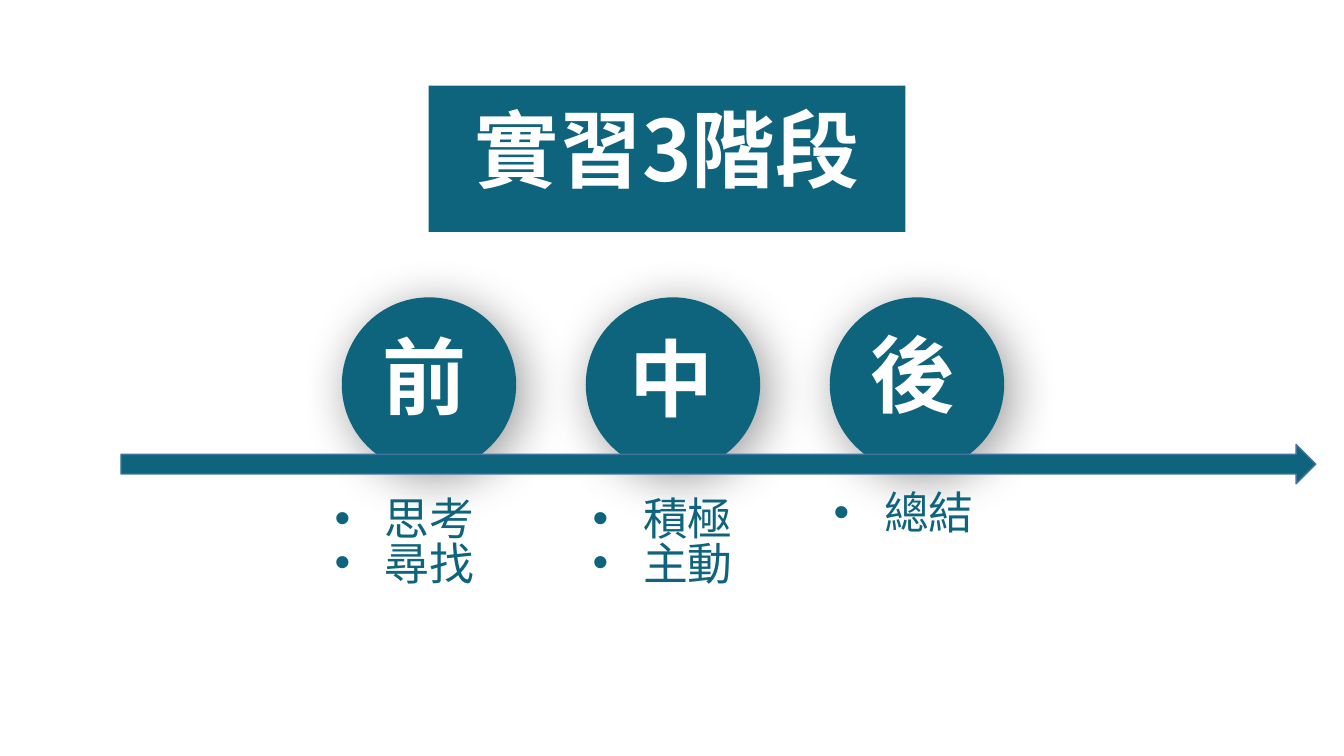
from lxml import etree
from pptx import Presentation
from pptx import util as u
from pptx.dml.color import RGBColor
from pptx.enum import shapes, text
from pptx.oxml import parse_xml
from pptx.oxml.ns import nsdecls, qn

COLORS = {"teal": "0E647C", "white": "FFFFFF", "edge": "43739E"}
FONT = "Noto Sans CJK SC"


def color(name):
    return RGBColor.from_string(COLORS[name])


def add_run(paragraph, words, size, color_name, bold=False):
    run = paragraph.add_run()
    run.text = words
    run.font.size = u.Pt(size)
    run.font.name = FONT
    run.font.bold = bold
    run.font.color.rgb = color(color_name)
    etree.SubElement(run.font._element, qn("a:ea")).set("typeface", FONT)


presentation = Presentation()
presentation.slide_width = u.Inches(13.33)
presentation.slide_height = u.Inches(7.5)
slide = presentation.slides.add_slide(presentation.slide_layouts[5])

# Title banner
title = slide.shapes.title
title.left, title.top = u.Inches(4.25), u.Inches(0.85)
title.width, title.height = u.Inches(4.73), u.Inches(1.45)
title.fill.solid()
title.fill.fore_color.rgb = color("teal")
title.text_frame.auto_size = text.MSO_AUTO_SIZE.NONE
title.text_frame.vertical_anchor = text.MSO_ANCHOR.MIDDLE
title.text_frame.margin_bottom = u.Inches(0.13)
paragraph = title.text_frame.paragraphs[0]
paragraph.alignment = text.PP_ALIGN.CENTER
paragraph.line_spacing = 0.9
add_run(paragraph, "實習3階段", 60, "white", bold=True)

# Stage circles with soft shadows
CIRCLE_LEFT, CIRCLE_STEP, CIRCLE_SIZE = 3.39, 2.42, 1.73
for column in range(3):
    circle = slide.shapes.add_shape(
        shapes.MSO_SHAPE.OVAL, u.Inches(CIRCLE_LEFT + column * CIRCLE_STEP),
        u.Inches(2.95), u.Inches(CIRCLE_SIZE), u.Inches(CIRCLE_SIZE))
    circle.fill.solid()
    circle.fill.fore_color.rgb = color("teal")
    circle.line.fill.background()
    circle._element.spPr.append(parse_xml(
        f'<a:effectLst {nsdecls("a")}><a:outerShdw blurRad="{u.Pt(35)}" '
        f'dist="{u.Pt(7)}" dir="{45 * 60000}" algn="tl" rotWithShape="0">'
        '<a:srgbClr val="000000"><a:alpha val="40000"/></a:srgbClr>'
        '</a:outerShdw></a:effectLst>'))

# Stage names and their bullet lists: name, name box, list corner, items
stages = [
    ("前", (3.57, 3.04, 1.29, 1.56), (3.22, 4.87), ["思考", "尋找"]),
    ("中", (6.14, 3.12, 1.15, 1.45), (5.78, 4.87), ["積極", "主動"]),
    ("後", (8.54, 3.08, 1.15, 1.45), (8.17, 4.81), ["總結"]),
]
for name, name_box, (list_left, list_top), items in stages:
    label = slide.shapes.add_textbox(*map(u.Inches, name_box)).text_frame
    label.word_wrap = True
    label.vertical_anchor = text.MSO_ANCHOR.MIDDLE
    label.margin_bottom = u.Inches(0.13)
    paragraph = label.paragraphs[0]
    paragraph.line_spacing = 0.9
    if name == "前":
        paragraph.alignment = text.PP_ALIGN.CENTER
    add_run(paragraph, name, 60, "white", bold=True)

    bullets = slide.shapes.add_textbox(
        u.Inches(list_left), u.Inches(list_top),
        u.Inches(1.64), u.Inches(1.72)).text_frame
    bullets.word_wrap = True
    bullets.margin_top = u.Inches(0.09)
    for index, item in enumerate(items):
        paragraph = bullets.add_paragraph() if index else bullets.paragraphs[0]
        paragraph.line_spacing = 0.83
        properties = paragraph._p.get_or_add_pPr()
        properties.set("marL", str(u.Inches(0.5)))
        properties.set("indent", str(-u.Inches(0.5)))
        etree.SubElement(properties, qn("a:buFont")).set("typeface", "Arial")
        etree.SubElement(properties, qn("a:buChar")).set("char", "•")
        add_run(paragraph, item, 32, "teal")

# Timeline arrow in front of the circles
arrow = slide.shapes.add_shape(
    shapes.MSO_SHAPE.RIGHT_ARROW, u.Inches(1.2), u.Inches(4.41),
    u.Inches(11.85), u.Inches(0.39))
arrow.shadow.inherit = False
arrow.fill.solid()
arrow.fill.fore_color.rgb = color("teal")
arrow.line.color.rgb = color("edge")
arrow.line.width = u.Pt(1)

presentation.save("out.pptx")
